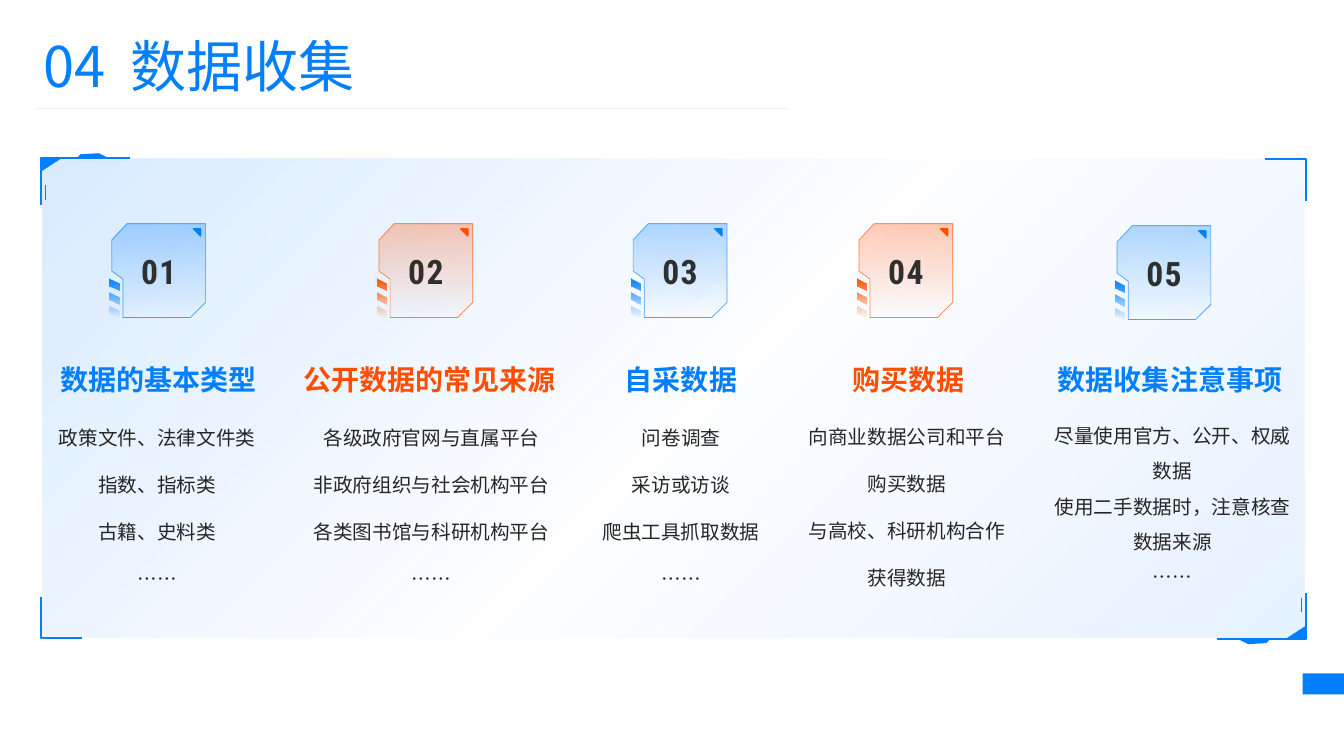
from dataclasses import dataclass

from lxml import etree
from pptx import Presentation
from pptx.dml.color import RGBColor
from pptx.enum.shapes import MSO_CONNECTOR, MSO_SHAPE
from pptx.enum.text import MSO_ANCHOR, MSO_AUTO_SIZE, PP_ALIGN
from pptx.oxml import parse_xml
from pptx.oxml.ns import nsdecls, qn
from pptx.slide import Slide
from pptx.util import Inches, Pt

RECTANGLE, TRIANGLE = MSO_SHAPE.RECTANGLE, MSO_SHAPE.ISOSCELES_TRIANGLE
STRAIGHT = MSO_CONNECTOR.STRAIGHT
LEFT, CENTER = PP_ALIGN.LEFT, PP_ALIGN.CENTER
TOP, MIDDLE, BOTTOM = MSO_ANCHOR.TOP, MSO_ANCHOR.MIDDLE, MSO_ANCHOR.BOTTOM
NO_FIT = MSO_AUTO_SIZE.NONE

BLUE = RGBColor(0x02, 0x7F, 0xFD)
ORANGE = RGBColor(0xFF, 0x4E, 0x01)
INK = RGBColor(0x26, 0x26, 0x26)
PALE = RGBColor(0xF2, 0xF2, 0xF2)

PANEL = (0.42, 1.57, 12.52, 4.76)
FRAME_WIDTH, FRAME_HEIGHT = 13.36, 7.91
BADGE = [(0.15, 0), (0.93, 0), (0.93, 0.78), (0.78, 0.93), (0.11, 0.93), (0.11, 0.55), (0, 0.47), (0, 0.16)]
STRIPE = [(-0.02, 0.54), (0.07, 0.59), (0.07, 0.67), (-0.02, 0.62)]
STRIPE_STEP = 0.135

COLUMNS = [
    ("数据的基本类型", BLUE, (1.11, 2.22), (0.49, 2.17), (0.34, 3.99, 2.44), 2.0,
     ["政策文件、法律文件类", "指数、指标类", "古籍、史料类", "……"]),
    ("公开数据的常见来源", ORANGE, (3.76, 2.22), (2.84, 2.84), (3.04, 3.99, 2.48), 2.0,
     ["各级政府官网与直属平台", "非政府组织与社会机构平台", "各类图书馆与科研机构平台", "……"]),
    ("自采数据", BLUE, (6.28, 2.22), (5.67, 2.17), (5.67, 3.99, 2.17), 2.0,
     ["问卷调查", "采访或访谈", "爬虫工具抓取数据", "……"]),
    ("购买数据", ORANGE, (8.52, 2.22), (7.93, 2.17), (7.97, 3.98, 2.05), 2.0,
     ["向商业数据公司和平台购买数据", "与高校、科研机构合作获得数据"]),
    ("数据收集注意事项", BLUE, (11.08, 2.24), (10.4, 2.41), (10.46, 4.09, 2.34), 1.5,
     ["尽量使用官方、公开、权威数据", "使用二手数据时，注意核查数据来源", "……"]),
]


def add_run(paragraph, text, size=14, color=INK, bold=False, font="Noto Sans CJK SC", spacing=0, alpha=100):
    run = paragraph.add_run()
    run.text = text
    run.font.size, run.font.bold, run.font.name = Pt(size), bold, font
    run.font.color.rgb = color
    properties = run.font._element
    etree.SubElement(properties, qn("a:ea"), typeface=font)
    if spacing:
        properties.set("spc", str(spacing * 100))
    if alpha < 100:
        set_alpha(properties, alpha)


def set_alpha(element, percent):
    color = element.find(f"{qn('a:solidFill')}/{qn('a:srgbClr')}")
    etree.SubElement(color, qn("a:alpha"), val=str(percent * 1000))


def write_text(shape, lines, align=CENTER, anchor=TOP, inset=0, line_spacing=None, **run_format):
    frame = shape.text_frame
    frame.word_wrap, frame.auto_size, frame.vertical_anchor = True, NO_FIT, anchor
    frame.margin_left = frame.margin_right = Inches(inset)
    frame.margin_top = frame.margin_bottom = Inches(inset / 2)
    for index, line in enumerate(lines):
        paragraph = frame.add_paragraph() if index else frame.paragraphs[0]
        paragraph.alignment = align
        if line_spacing:
            paragraph.line_spacing = line_spacing
        add_run(paragraph, line, **run_format)


def half_turn(points):
    return [(FRAME_WIDTH - x, FRAME_HEIGHT - y) for x, y in points]


@dataclass
class SlideBuilder:
    """Draws styled elements on the current slide."""

    slide: Slide
    accent: RGBColor = BLUE

    def paint(self, shape, fill=None, gradient=None, angle=270, line=None, width=0.5, line_alpha=100):
        shape.shadow.inherit = False
        if fill is not None:
            shape.fill.solid()
            shape.fill.fore_color.rgb = fill
        else:
            shape.fill.background()
        if gradient:
            color, positions = gradient
            stops = "".join(
                f'<a:gs pos="{position * 1000}"><a:srgbClr val="{color}">'
                f'<a:alpha val="{alpha * 1000}"/></a:srgbClr></a:gs>'
                for position, alpha in positions)
            properties = shape.element.spPr
            properties.replace(properties.find(qn("a:noFill")), parse_xml(
                f'<a:gradFill {nsdecls("a")} rotWithShape="1"><a:gsLst>{stops}</a:gsLst>'
                f'<a:lin ang="{angle * 60000}" scaled="0"/></a:gradFill>'))
        if line is None:
            shape.line.fill.background()
        else:
            shape.line.color.rgb = line
            shape.line.width = Pt(width)
            if line_alpha < 100:
                set_alpha(shape.element.spPr.find(qn("a:ln")), line_alpha)
        return shape

    def preset(self, kind, box, **style):
        return self.paint(self.slide.shapes.add_shape(kind, *map(Inches, box)), **style)

    def corner_triangle(self, box, rotation=0, **style):
        triangle = self.preset(TRIANGLE, box, **style)
        triangle.adjustments[0] = 1.0
        triangle.rotation = rotation

    def outline(self, contours, close=True, **style):
        contours = [[(Inches(x), Inches(y)) for x, y in points] for points in contours]
        builder = self.slide.shapes.build_freeform(*contours[0][0])
        for index, points in enumerate(contours):
            if index:
                builder.move_to(*points[0])
            builder.add_line_segments(points[1:], close=close)
        return self.paint(builder.convert_to_shape(), **style)

    def line(self, start, end, color, width):
        connector = self.slide.shapes.add_connector(STRAIGHT, *map(Inches, (*start, *end)))
        connector.line.color.rgb = color
        connector.line.width = Pt(width)
        etree.SubElement(connector.element.spPr, qn("a:effectLst"))

    def title(self, number, text, box):
        title = self.slide.shapes.title
        title.left, title.top, title.width, title.height = map(Inches, box)
        write_text(title, [number], align=LEFT, inset=0.1, size=40, color=self.accent)
        paragraph = title.text_frame.paragraphs[0]
        add_run(paragraph, " ", size=40, color=self.accent, spacing=9)
        add_run(paragraph, text, size=40, color=self.accent)

    def text(self, lines, box, **style):
        write_text(self.slide.shapes.add_textbox(*map(Inches, box)), lines, **style)

    def corners(self):
        for turn, rotation, triangle in ((half_turn, 0, (12.75, 6.21)), (list, 180, (0.41, 1.57))):
            plain = turn([(12.55, 1.58), (12.95, 1.58), (12.95, 1.99)])
            bracket = turn([(1.29, 1.57), (0.41, 1.57), (0.41, 2.03)])
            for points in (plain, bracket):
                self.outline([points], close=False, line=self.accent, width=1.5)
            self.corner_triangle((*triangle, 0.2, 0.13), rotation, fill=self.accent)
            self.line(*turn([(0.45, 1.84), (0.45, 1.98)]), self.accent, 1)
            self.outline([turn([(0.98, 1.52), (1.08, 1.57), (0.76, 1.57), (0.8, 1.53)])], fill=self.accent)

    def badge(self, number, left, top, color):
        badge = self.outline([[(left + x, top + y) for x, y in BADGE]],
                             gradient=(color, [(0, 0), (100, 30)]), line=color, line_alpha=70)
        write_text(badge, [f"{number:02}"], anchor=MIDDLE, inset=0.1, size=24, bold=True,
                   font="Roboto Condensed", spacing=1, alpha=95)
        self.corner_triangle((left + 0.81, top + 0.05, 0.07, 0.07), 270, fill=color, line=color, width=1)
        stripes = [[(left + x, top + y + index * STRIPE_STEP) for x, y in STRIPE] for index in range(3)]
        self.outline(stripes, gradient=(color, [(0, 0), (100, 100)]))


def main():
    presentation = Presentation()
    presentation.slide_width, presentation.slide_height = Inches(13.33), Inches(7.5)
    builder = SlideBuilder(presentation.slides.add_slide(presentation.slide_layouts[5]))
    builder.preset(RECTANGLE, (12.92, 6.68, 0.41, 0.21), fill=BLUE)
    builder.title("04", "数据收集", (0.33, 0.26, 7.68, 0.77))
    builder.line((0.35, 1.08), (7.83, 1.08), PALE, 0.5)
    builder.preset(RECTANGLE, PANEL, gradient=(BLUE, [(0, 15), (52, 0), (100, 10)]), angle=45)
    builder.corners()
    for number, column in enumerate(COLUMNS, 1):
        heading, color, badge, (left, width), body, spacing, items = column
        builder.badge(number, *badge, color)
        builder.text([heading], (left, 3.49, width, 0.44), anchor=BOTTOM, size=20, bold=True, color=color)
        builder.text(items, (*body, 2.51), line_spacing=spacing)
    presentation.save("out.pptx")


if __name__ == "__main__":
    main()
